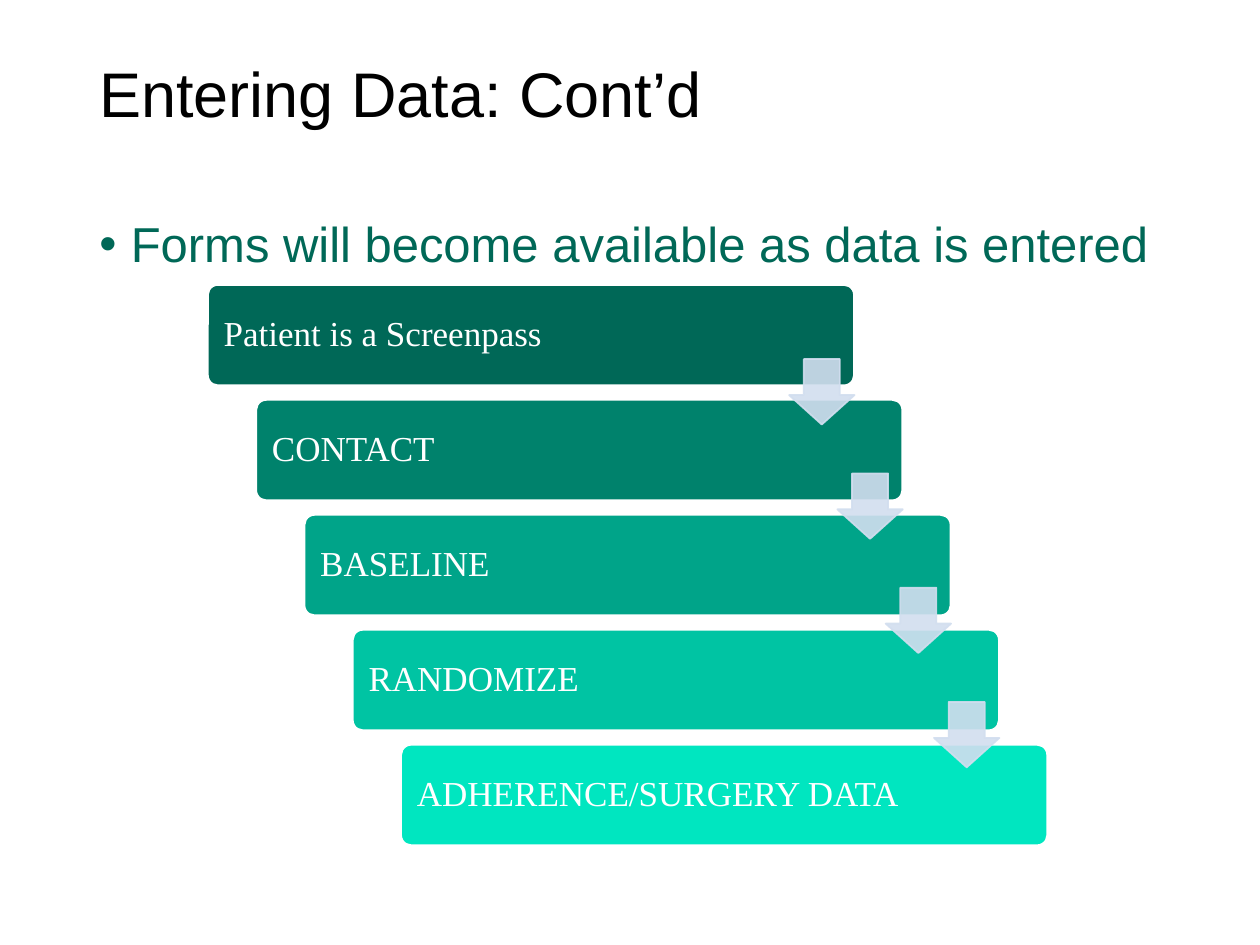
"""Build a slide showing the staggered order in which data entry forms open."""
from lxml.etree import SubElement
from pptx import Presentation
from pptx.dml.color import RGBColor
from pptx.enum.shapes import MSO_SHAPE
from pptx.enum.text import MSO_ANCHOR, PP_ALIGN
from pptx.oxml.ns import qn
from pptx.util import Pt

BLACK = RGBColor(0x00, 0x00, 0x00)
WHITE = RGBColor(0xFF, 0xFF, 0xFF)
DARK_GREEN = RGBColor(0x00, 0x68, 0x57)
PALE_BLUE = RGBColor(0xD2, 0xDE, 0xEF)

TITLE = "Entering Data: Cont’d"
BULLET = "Forms will become available as data is entered"
STEPS = [
    ("Patient is a Screenpass", DARK_GREEN),
    ("CONTACT", RGBColor(0x00, 0x82, 0x6C)),
    ("BASELINE", RGBColor(0x00, 0xA4, 0x89)),
    ("RANDOMIZE", RGBColor(0x00, 0xC4, 0xA3)),
    ("ADHERENCE/SURGERY DATA", RGBColor(0x00, 0xE6, 0xC0)),
]

TITLE_FONT = {"name": "Arial", "size": Pt(36)}
BULLET_FONT = {"name": "Arial", "size": Pt(28)}
STEP_FONT = {"name": "Times New Roman", "size": Pt(20)}
STEP_FRAME = {
    "word_wrap": True,
    "vertical_anchor": MSO_ANCHOR.MIDDLE,
    "margin_left": Pt(7.3),
    "margin_right": Pt(62),
    "margin_top": Pt(7.3),
    "margin_bottom": Pt(7.3),
}

TEXT_LEFT, TEXT_WIDTH, TEXT_HEIGHT = 49.7, 620.6, 57.6
TITLE_TOP, BULLET_TOP = 32.4, 122.4
STEP_LEFT, STEP_TOP, STEP_WIDTH, STEP_HEIGHT = 118.8, 162.8, 369.2, 57.4
ARROW_LEFT, ARROW_TOP, ARROW_SIZE = 450.9, 205.2, 37.4
SHIFT_RIGHT, STEP_DOWN, ARROW_DOWN = 27.6, 65.7, 65.3


def apply_format(target, values):
    for name, value in values.items():
        setattr(target, name, value)


def write_text(frame, text, font, color):
    paragraph = frame.paragraphs[0]
    paragraph.text = text
    paragraph.alignment = PP_ALIGN.LEFT
    paragraph.line_spacing = 0.9
    run_font = paragraph.runs[0].font
    apply_format(run_font, font)
    run_font.color.rgb = color
    return paragraph


def add_text(slide, top, text, font, color):
    box = slide.shapes.add_textbox(Pt(TEXT_LEFT), Pt(top), Pt(TEXT_WIDTH), Pt(TEXT_HEIGHT))
    box.text_frame.word_wrap = True
    return write_text(box.text_frame, text, font, color)


def add_bullet(paragraph):
    properties = paragraph._p.get_or_add_pPr()
    properties.set("marL", str(Pt(18)))
    properties.set("indent", str(-Pt(18)))
    SubElement(properties, qn("a:buFont")).set("typeface", "Arial")
    SubElement(properties, qn("a:buChar")).set("char", "•")


def add_block(slide, kind, left, top, width, height, fill, line, adjustments):
    shape = slide.shapes.add_shape(kind, Pt(left), Pt(top), Pt(width), Pt(height))
    shape.shadow.inherit = False
    shape.fill.solid()
    shape.fill.fore_color.rgb = fill
    shape.line.color.rgb = line
    shape.line.width = Pt(1)
    for index, value in enumerate(adjustments):
        shape.adjustments[index] = value
    return shape


def main():
    presentation = Presentation()
    presentation.slide_width, presentation.slide_height = Pt(720), Pt(540)
    slide = presentation.slides.add_slide(presentation.slide_layouts[6])

    add_text(slide, TITLE_TOP, TITLE, TITLE_FONT, BLACK)
    add_bullet(add_text(slide, BULLET_TOP, BULLET, BULLET_FONT, DARK_GREEN))

    for index, (label, color) in enumerate(STEPS):
        step = add_block(
            slide, MSO_SHAPE.ROUNDED_RECTANGLE,
            STEP_LEFT + index * SHIFT_RIGHT, STEP_TOP + index * STEP_DOWN,
            STEP_WIDTH, STEP_HEIGHT, color, WHITE, [0.1])
        apply_format(step.text_frame, STEP_FRAME)
        write_text(step.text_frame, label, STEP_FONT, WHITE)

    for index in range(len(STEPS) - 1):
        arrow = add_block(
            slide, MSO_SHAPE.DOWN_ARROW,
            ARROW_LEFT + index * SHIFT_RIGHT, ARROW_TOP + index * ARROW_DOWN,
            ARROW_SIZE, ARROW_SIZE, PALE_BLUE, PALE_BLUE, [0.55, 0.45])
        for color in arrow._element.spPr.iter(qn("a:srgbClr")):
            SubElement(color, qn("a:alpha")).set("val", "90000")

    presentation.save("out.pptx")


if __name__ == "__main__":
    main()
